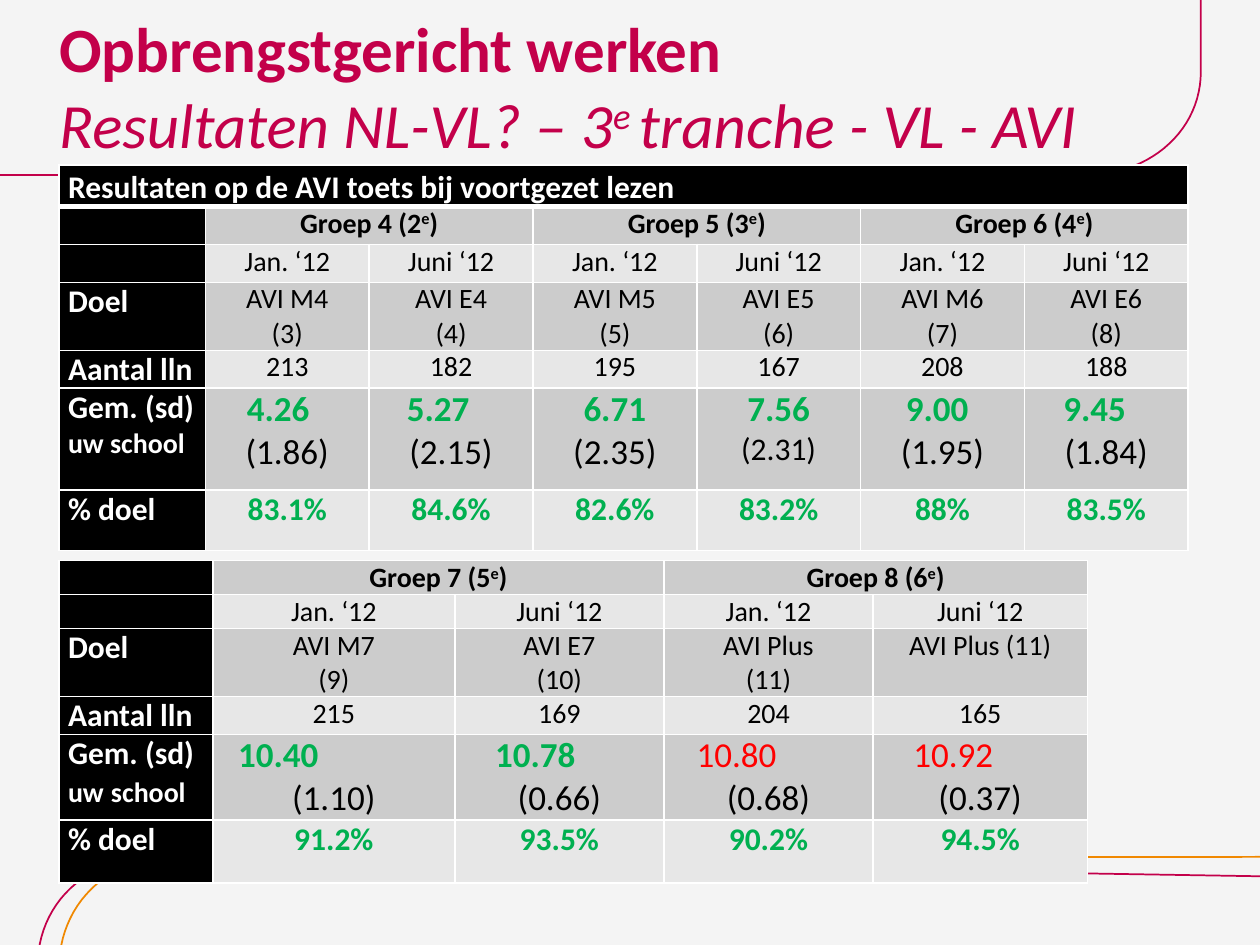
"""Build the slide with AVI reading results for groups 4 to 8."""
from lxml import etree
from pptx import Presentation, util as u
from pptx.dml.color import RGBColor
from pptx.enum import text as t
from pptx.oxml import ns

BLACK, WHITE, CRIMSON, ORANGE = "000000", "FFFFFF", "C3004A", "F08800"
GREEN, RED, DARK, LIGHT = "00B050", "FF0000", "CCCCCC", "E7E7E7"
UNIT = u.Inches(1)
LEFT = 0.47


def color(value):
    return RGBColor.from_string(value)


def write(para, content, size=16, ink=BLACK, bold=False, italic=False, align=None, indent=0):
    """Add text to a paragraph, raising the parts between carets."""
    para.alignment = align
    if indent:
        para._p.get_or_add_pPr().set("marL", str(int(indent * UNIT)))
    for index, part in enumerate(content.split("^")):
        span = para.add_run()
        span.text = part
        font = span.font
        font.name, font.size, font.bold, font.italic = "Calibri", u.Pt(size), bold, italic
        font.color.rgb = color(ink)
        if index % 2:
            span._r.get_or_add_rPr().set("baseline", "30000")


deck = Presentation()
deck.slide_width, deck.slide_height = 10 * UNIT, int(7.5 * UNIT)
page = deck.slides.add_slide(deck.slide_layouts[6])
page.background.fill.solid()
page.background.fill.fore_color.rgb = color("F4F4F4")

swooshes = [
    (CRIMSON, (0.27, 8.89), (10.3, 6.96),
     [(0.3, 7.66), (0.3, 7.43), (0.39, 7.21), (0.56, 7.05), (0.72, 6.9), (0.94, 6.81), (1.17, 6.81)]),
    (ORANGE, (0.47, 8.91), (10.46, 6.8),
     [(0.47, 7.67), (0.47, 7.44), (0.56, 7.22), (0.72, 7.06), (0.88, 6.9), (1.1, 6.81), (1.33, 6.81)]),
    (CRIMSON, (9.53, -0.58), (-0.46, 1.39),
     [(9.53, 0.57), (9.53, 0.79), (9.44, 0.99), (9.28, 1.14), (9.12, 1.29), (8.9, 1.38), (8.67, 1.38)]),
]
for ink, start, end, bend in swooshes:
    points = [bend[0]]
    for first in (0, 3):
        for step in range(1, 13):
            s = step / 12
            weights = ((1 - s) ** 3, 3 * s * (1 - s) ** 2, 3 * s * s * (1 - s), s ** 3)
            points.append([sum(w * p[axis] for w, p in zip(weights, bend[first:first + 4]))
                           for axis in (0, 1)])
    points.append(end)
    outline = page.shapes.build_freeform(int(start[0] * UNIT), int(start[1] * UNIT))
    outline.add_line_segments([(int(x * UNIT), int(y * UNIT)) for x, y in points], close=False)
    swoosh = outline.convert_to_shape()
    swoosh.shadow.inherit = False
    swoosh.fill.background()
    swoosh.line.color.rgb = color(ink)
    swoosh.line.width = u.Pt(1)

title = page.shapes.add_textbox(int(LEFT * UNIT), 0, int(9.06 * UNIT), int(1.35 * UNIT)).text_frame
title.word_wrap = True
title.vertical_anchor = t.MSO_ANCHOR.MIDDLE
title.margin_left = title.margin_right = 0
heading = title.paragraphs[0]
write(heading, "Opbrengstgericht werken", size=36, ink=CRIMSON, bold=True)
heading.add_line_break()
write(heading, "Resultaten NL-VL? – 3^e ^tranche - VL - AVI", size=36, ink=CRIMSON, italic=True)

results = [
    dict(top=1.31, caption="Resultaten op de AVI toets bij voortgezet lezen",
         columns=[1.16] + [1.3] * 6, heights=[0.33, 0.3, 0.3, 0.54, 0.3, 0.81, 0.48],
         groups=["Groep 4 (2^e^)", "Groep 5 (3^e^)", "Groep 6 (4^e^)"],
         goals=["AVI M4|(3)", "AVI E4|(4)", "AVI M5|(5)", "AVI E5|(6)", "AVI M6|(7)", "AVI E6|(8)"],
         counts=["213", "182", "195", "167", "208", "188"],
         means=[("4.26", 0.26, "(1.86)", 20, GREEN), ("5.27", 0.23, "(2.15)", 20, GREEN),
                ("6.71", 0, "(2.35)", 20, GREEN), ("7.56", 0, "(2.31)", 18, GREEN),
                ("9.00", 0.29, "(1.95)", 20, GREEN), ("9.45", 0.24, "(1.84)", 20, GREEN)],
         shares=["83.1%", "84.6%", "82.6%", "83.2%", "88%", "83.5%"],
         school=[("uw school", 16)]),
    dict(top=4.45, caption=None,
         columns=[1.22, 1.92, 1.66, 1.66, 1.7], heights=[0.27, 0.27, 0.54, 0.3, 0.68, 0.5],
         groups=["Groep 7 (5^e^)", "Groep 8 (6^e^)"],
         goals=["AVI M7|(9)", "AVI E7|(10)", "AVI Plus|(11)", "AVI Plus (11)"],
         counts=["215", "169", "204", "165"],
         means=[("10.40", 0.13, "(1.10)", 20, GREEN), ("10.78", 0.25, "(0.66)", 20, GREEN),
                ("10.80", 0.19, "(0.68)", 20, RED), ("10.92", 0.25, "(0.37)", 20, RED)],
         shares=["91.2%", "93.5%", "90.2%", "94.5%"],
         school=[("uw", 16), (" ", 18), ("school", 16)]),
]
CENTER = t.PP_ALIGN.CENTER
for result in results:
    columns, heights = result["columns"], result["heights"]
    head = 1 if result["caption"] else 0
    table = page.shapes.add_table(
        len(heights), len(columns), int(LEFT * UNIT), int(result["top"] * UNIT),
        int(sum(columns) * UNIT), int(sum(heights) * UNIT)).table
    table.first_row = table.horz_banding = False
    for column, width in zip(table.columns, columns):
        column.width = int(width * UNIT)
    for row, height in zip(table.rows, heights):
        row.height = int(height * UNIT)

    for r in range(len(heights)):
        for c in range(len(columns)):
            cell = table.cell(r, c)
            cell.margin_left = cell.margin_right = int(0.07 * UNIT)
            cell.margin_top = cell.margin_bottom = 0
            caption_row = head and r == 0
            for side in "LRTB":
                points = 3 if caption_row and side == "B" else 1
                edge = etree.SubElement(cell._tc.get_or_add_tcPr(), ns.qn(f"a:ln{side}"), w=str(u.Pt(points)))
                paint = etree.SubElement(edge, ns.qn("a:solidFill"))
                etree.SubElement(paint, ns.qn("a:srgbClr"), val=WHITE)
            cell.fill.solid()
            shade = LIGHT if (r - head) % 2 else DARK
            cell.fill.fore_color.rgb = color(BLACK if c == 0 or caption_row else shade)

    if head:
        table.cell(0, 0).merge(table.cell(0, len(columns) - 1))
        caption = table.cell(0, 0).text_frame.paragraphs[0]
        caption.line_spacing = 1.1
        write(caption, result["caption"], size=18, ink=WHITE, bold=True, align=t.PP_ALIGN.JUSTIFY)

    for r in (head, head + 1):
        blank = table.cell(r, 0).text_frame.paragraphs[0]
        etree.SubElement(blank._p, ns.qn("a:endParaRPr"), sz="1600")
    for r, label in enumerate(["Doel", "Aantal lln", "Gem. (sd) ", "% doel"], head + 2):
        para = table.cell(r, 0).text_frame.paragraphs[0]
        write(para, label, size=18, ink=WHITE, bold=True)
        if label.startswith("Gem."):
            for word, size in result["school"]:
                write(para, word, size=size, ink=WHITE, bold=True)

    for g, group in enumerate(result["groups"]):
        first = 1 + 2 * g
        table.cell(head, first).merge(table.cell(head, first + 1))
        write(table.cell(head, first).text_frame.paragraphs[0], group, bold=True, align=CENTER)

    months = ["Jan. ‘12", "Juni ‘12"] * len(result["groups"])
    records = zip(months, result["goals"], result["counts"], result["means"], result["shares"])
    for c, (month, goal, count, mean, share) in enumerate(records, 1):
        value, indent, deviation, size, ink = mean
        contents = [
            [(month, {})],
            [(line, {}) for line in goal.split("|")],
            [(count, {})],
            [(value, dict(size=20, ink=ink, bold=ink == GREEN, indent=indent,
                          align=t.PP_ALIGN.LEFT if indent else CENTER)),
             (deviation, dict(size=size))],
            [(share, dict(size=18, ink=GREEN, bold=True))],
        ]
        for r, lines in enumerate(contents, head + 1):
            frame = table.cell(r, c).text_frame
            for n, (line, look) in enumerate(lines):
                para = frame.add_paragraph() if n else frame.paragraphs[0]
                write(para, line, **{"align": CENTER, **look})

deck.save("out.pptx")
